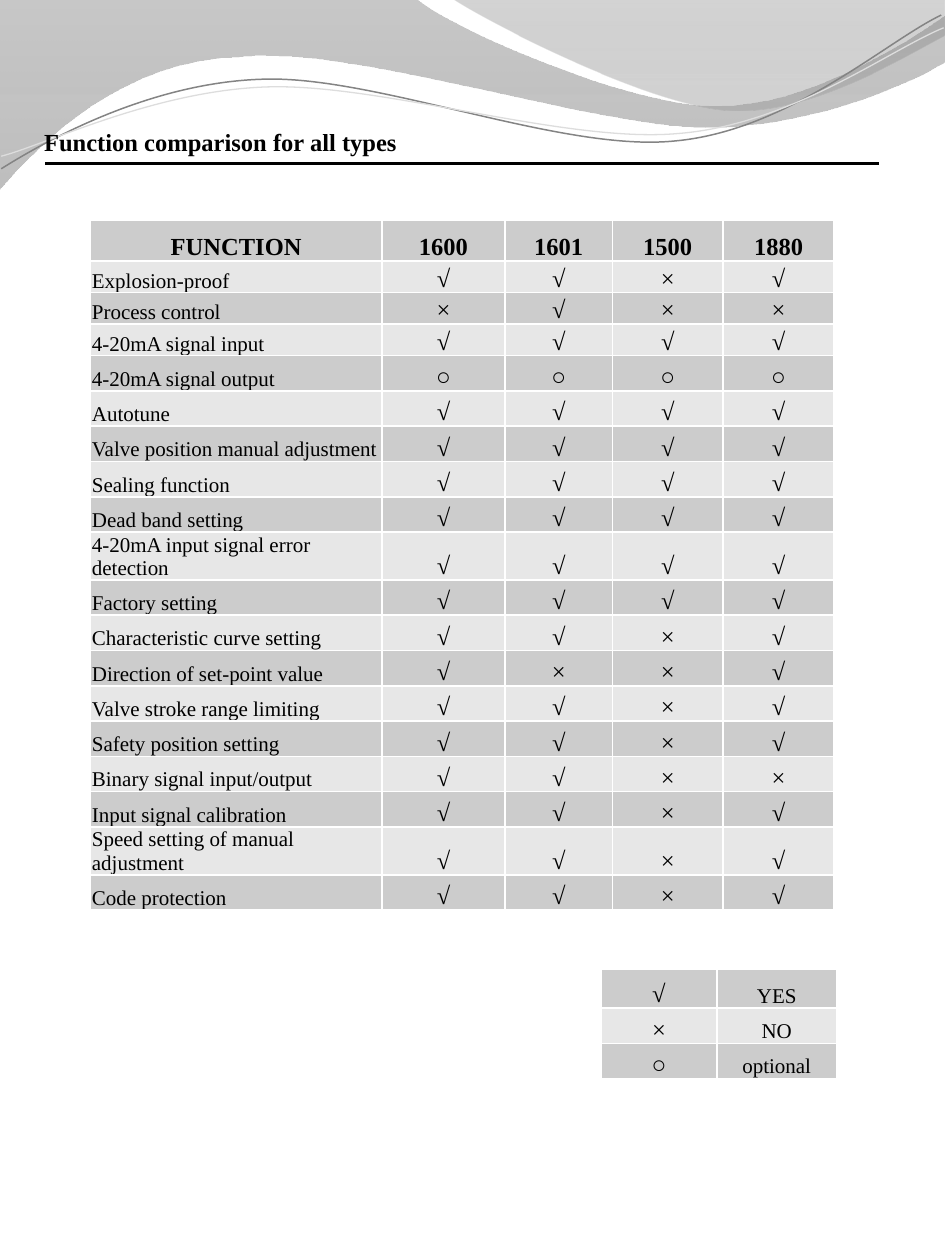
"""Build a one-page function comparison with a wave header and a legend."""
import math

from lxml import etree
from pptx import Presentation, util as u
from pptx.dml.color import RGBColor
from pptx.enum import shapes, text
from pptx.oxml import ns, parse_xml

THEME = {
    "font": "Times New Roman", "ink": "000000", "edge": "FFFFFF",
    "bands": ("CCCCCC", "E7E7E7"), "big": 14, "small": 12,
}
TITLE = "Function comparison for all types"
HEAD = ("FUNCTION", "1600", "1601", "1500", "1880")
ROWS = [
    ("Explosion-proof", "√√×√"),
    ("Process control", "×√××"),
    ("4-20mA signal input", "√√√√"),
    ("4-20mA signal output", "○○○○"),
    ("Autotune", "√√√√"),
    ("Valve position manual adjustment", "√√√√"),
    ("Sealing function", "√√√√"),
    ("Dead band setting", "√√√√"),
    ("4-20mA input signal error detection", "√√√√"),
    ("Factory setting", "√√√√"),
    ("Characteristic curve setting", "√√×√"),
    ("Direction of set-point value", "√××√"),
    ("Valve stroke range limiting", "√√×√"),
    ("Safety position setting", "√√×√"),
    ("Binary signal input/output", "√√××"),
    ("Input signal calibration", "√√×√"),
    ("Speed setting of manual adjustment", "√√×√"),
    ("Code protection", "√√×√"),
]
LEGEND = [("√", "YES"), ("×", "NO"), ("○", "optional")]
WAVES = [
    {"box": (-0.01, -0.01, 7.52, 1.52),
     "steps": [(0, -0.01), (3.3, -0.01), (3.57, 0.22, 4.98, 0.84, 5.69, 0.84),
               (6.4, 0.84, 7.19, 0.34, 7.5, 0.12), (7.51, 0.48),
               (7.38, 0.58, 6.52, 1.01, 5.59, 1.01),
               (4.66, 1, 2.86, 0.37, 1.93, 0.45),
               (0.97, 0.47, 0.34, 1.11, -0.01, 1.51), (0, -0.01)],
     "stops": [(0, "848484", 45), (1, "888888", 55)]},
    {"box": (3.59, -0.01, 3.91, 0.93),
     "steps": [(3.59, -0.01), (3.82, 0.15, 5.11, 0.82, 5.77, 0.87),
               (6.42, 0.92, 7.21, 0.43, 7.5, 0.28), (7.5, 0), (3.59, -0.01)],
     "stops": [(0, "6F6F6F", 30), (0.8, "9D9D9D", 45)]},
    {"box": (-0.02, 0.3, 7.52, 0.95), "turn": 357.3,
     "steps": [(0.01, 1.34), (0.36, 1.12, 1.18, 0.66, 2.07, 0.63),
               (2.96, 0.59, 4.45, 1.21, 5.35, 1.12),
               (6.26, 1.04, 7.03, 0.33, 7.47, 0.12)],
     "line": ("848484", 0.85)},
    {"box": (-0.01, 0.4, 7.53, 0.77), "turn": 357.3,
     "steps": [(0.01, 1.24), (0.36, 1.15, 1.22, 0.72, 2.12, 0.69),
               (3.02, 0.66, 4.49, 1.14, 5.38, 1.06),
               (6.28, 0.99, 7.05, 0.4, 7.49, 0.22)],
     "line": ("DDDDDD", 0.75)},
]


def tint(name):
    return RGBColor.from_string(name)


def put(frame, words, size=THEME["small"], bold=False, align="LEFT", gap=None):
    para = frame.paragraphs[0]
    para.alignment = getattr(text.PP_ALIGN, align)
    para.line_spacing = gap
    run = para.add_run()
    run.text = words
    font = run.font
    font.name, font.size, font.bold = THEME["font"], u.Pt(size), bold
    font.color.rgb = tint(THEME["ink"])


def bend(wave, box, steps, turn, close):
    """Write line and curve steps into the outline, in the unturned frame."""
    left, top, wide, tall = box
    rad = math.radians(-turn)
    cos, sin = math.cos(rad), math.sin(rad)
    track = next(wave.element.spPr.iter(ns.qn("a:path")))
    for node in list(track):
        track.remove(node)
    track.set("w", str(u.Inches(wide)))
    track.set("h", str(u.Inches(tall)))
    for i, step in enumerate(steps):
        kind = "moveTo" if i == 0 else "lnTo" if len(step) == 2 else "cubicBezTo"
        part = etree.SubElement(track, ns.qn(f"a:{kind}"))
        for x, y in zip(step[::2], step[1::2]):
            dx, dy = x - left - wide / 2, y - top - tall / 2
            dot = etree.SubElement(part, ns.qn("a:pt"))
            dot.set("x", str(u.Inches(cos * dx - sin * dy + wide / 2)))
            dot.set("y", str(u.Inches(sin * dx + cos * dy + tall / 2)))
    if close:
        etree.SubElement(track, ns.qn("a:close"))


def place(shape, box):
    shape.left, shape.top, shape.width, shape.height = (u.Inches(n) for n in box)


def add_wave(slide, box, steps, turn=0, stops=None, line=None):
    pen = slide.shapes.build_freeform(0, 0)
    pen.add_line_segments([(u.Inches(box[2]), u.Inches(box[3]))], close=False)
    wave = pen.convert_to_shape()
    place(wave, box)
    wave.rotation = turn
    wave.shadow.inherit = False
    bend(wave, box, steps, turn, close=bool(stops))
    if line:
        wave.fill.background()
        wave.line.color.rgb, wave.line.width = tint(line[0]), u.Pt(line[1])
        return
    wave.line.fill.background()
    wave.fill.gradient()
    wave.fill.gradient_angle = 270
    for stop, (spot, hue, _) in zip(wave.fill.gradient_stops, stops):
        stop.position, stop.color.rgb = spot, tint(hue)
    for node, (_, _, alpha) in zip(wave.element.spPr.iter(ns.qn("a:srgbClr")), stops):
        etree.SubElement(node, ns.qn("a:alpha")).set("val", str(alpha * 1000))


def style(cell, band, head=False):
    side = 0.07 if head else 0.01
    cell.margin_left = cell.margin_right = u.Inches(side)
    cell.margin_top, cell.margin_bottom = u.Inches(0 if head else 0.01), 0
    cell.vertical_anchor = text.MSO_ANCHOR.MIDDLE if head else text.MSO_ANCHOR.BOTTOM
    props = cell._tc.get_or_add_tcPr()
    for edge in "LRTB":
        props.append(parse_xml(
            f'<a:ln{edge} {ns.nsdecls("a")} w="12700"><a:solidFill>'
            f'<a:srgbClr val="{THEME["edge"]}"/></a:solidFill></a:ln{edge}>'))
    cell.fill.solid()
    cell.fill.fore_color.rgb = tint(THEME["bands"][band % 2])


def add_grid(slide, left, top, wide, tall, rows, head=False):
    box = [u.Inches(n) for n in (left, top, sum(wide), sum(tall))]
    grid = slide.shapes.add_table(len(rows), len(wide), *box).table
    grid.first_row = grid.horz_banding = False
    for col, size in zip(grid.columns, wide):
        col.width = u.Inches(size)
    for r, (row, size) in enumerate(zip(rows, tall)):
        grid.rows[r].height = u.Inches(size)
        for c, words in enumerate(row):
            cell = grid.cell(r, c)
            top_row = head and r == 0
            style(cell, r, top_row)
            if top_row:
                form = {"size": THEME["big"], "bold": True, "align": "CENTER", "gap": 1.5}
            elif words in "√×○":
                form = {"size": THEME["big"], "align": "CENTER"}
            else:
                form = {"align": "LEFT" if head else "CENTER"}
            put(cell.text_frame, words, **form)


def add_title(slide):
    title = slide.shapes.title
    title.element.getparent().append(title.element)
    place(title, (0.25, 0.96, 6.73, 0.34))
    frame = title.text_frame
    frame.word_wrap = True
    frame.auto_size = text.MSO_AUTO_SIZE.SHAPE_TO_FIT_TEXT
    frame.vertical_anchor = text.MSO_ANCHOR.TOP
    put(frame, TITLE, size=THEME["big"], bold=True)
    ends = [u.Inches(n) for n in (0.36, 1.3, 6.98, 1.3)]
    rule = slide.shapes.add_connector(shapes.MSO_CONNECTOR.STRAIGHT, *ends)
    rule.line.color.rgb, rule.line.width = tint(THEME["ink"]), u.Pt(1.5)
    etree.SubElement(rule.element.spPr, ns.qn("a:effectLst"))


def main():
    deck = Presentation()
    deck.slide_width, deck.slide_height = u.Inches(7.5), u.Inches(10)
    slide = deck.slides.add_slide(deck.slide_layouts.get_by_name("Title Only"))
    for wave in WAVES:
        add_wave(slide, **wave)
    rows = [HEAD] + [(name, *marks) for name, marks in ROWS]
    tall = [0.28] + [0.25] * 3 + [0.28] * (len(ROWS) - 3)
    add_grid(slide, 0.72, 1.75, (2.31, 0.98, 0.85, 0.88, 0.88), tall, rows, head=True)
    add_title(slide)
    add_grid(slide, 4.77, 7.69, (0.92, 0.95), (0.31, 0.28, 0.28), LEGEND)
    deck.save("out.pptx")


if __name__ == "__main__":
    main()
